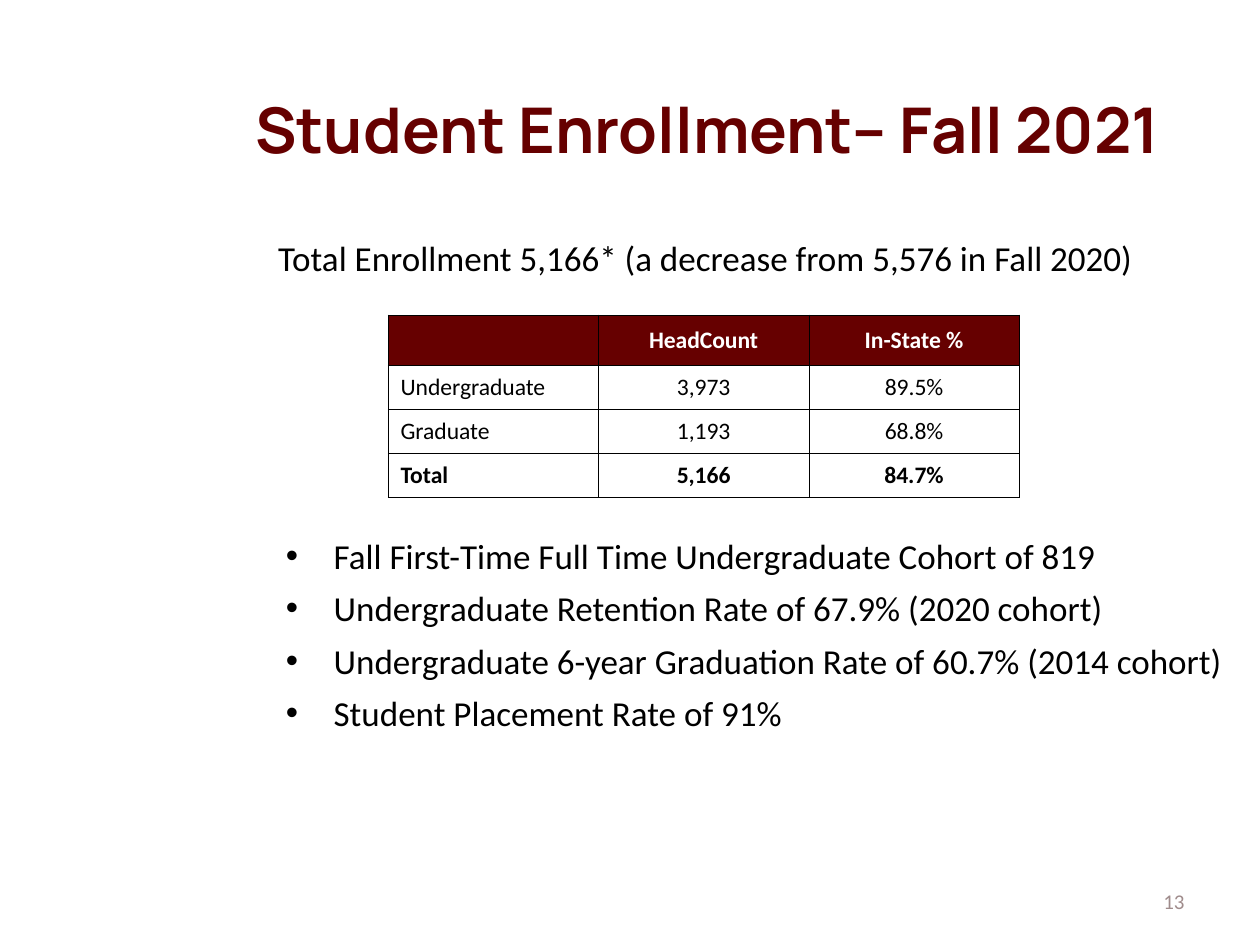
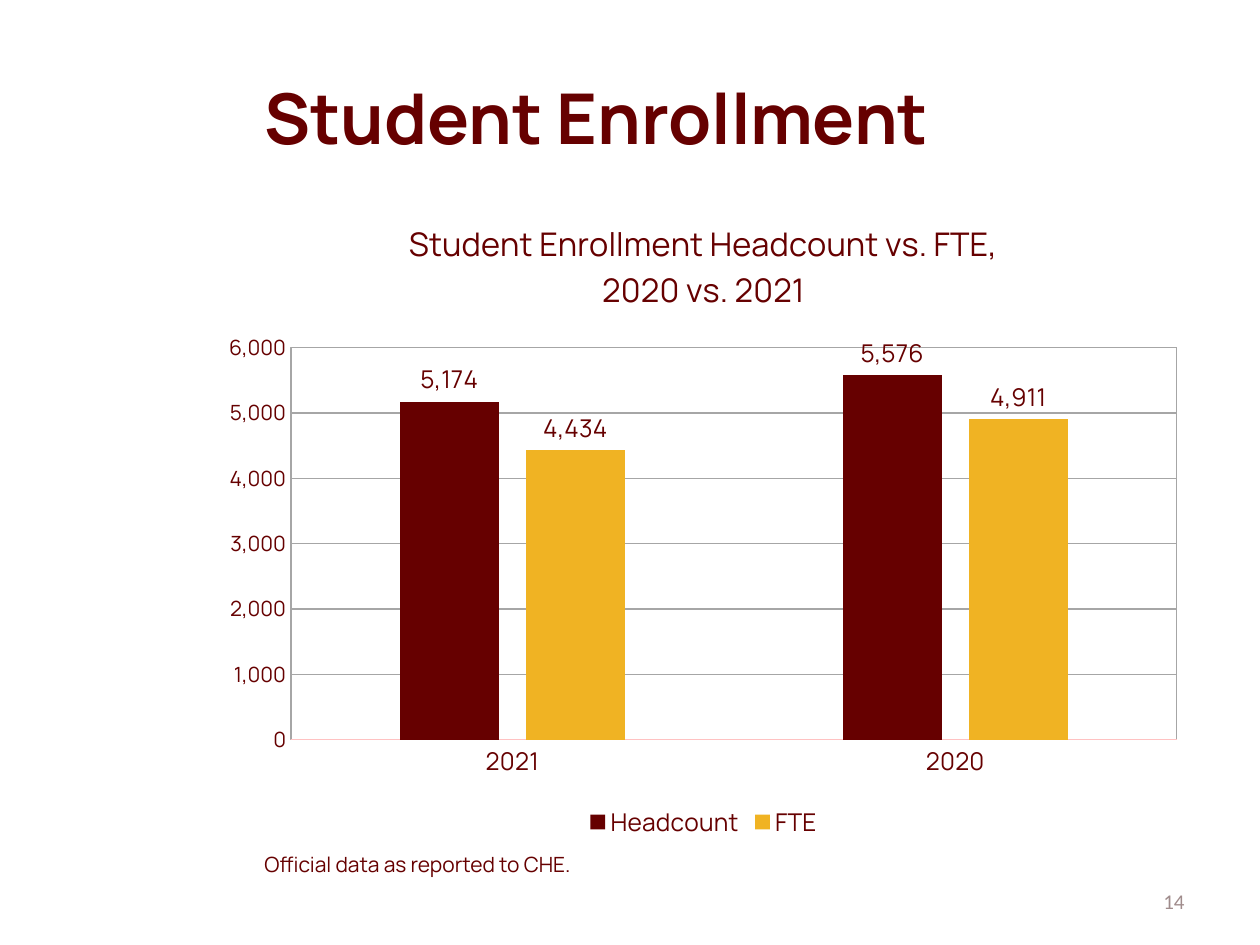
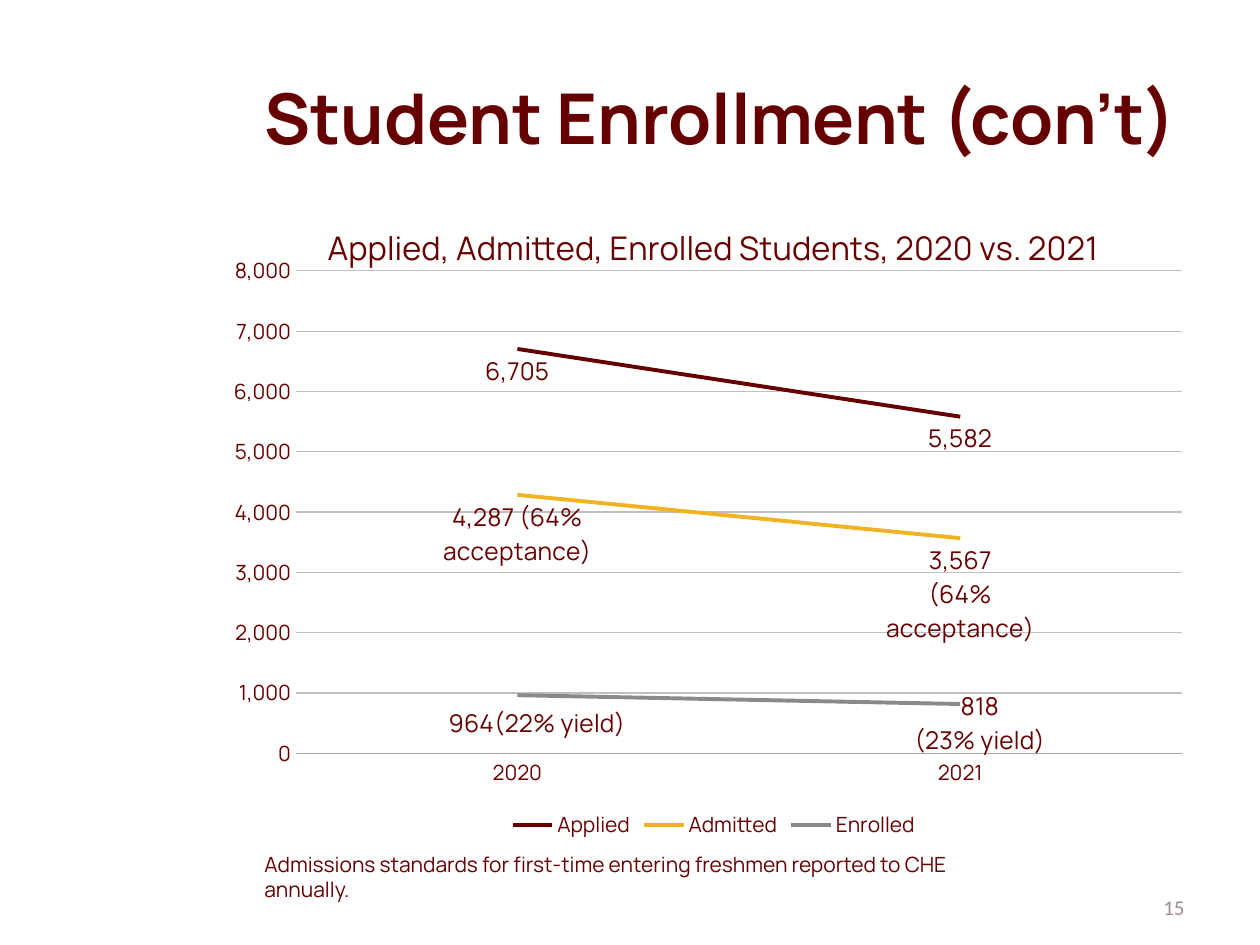
from dataclasses import dataclass

from lxml import etree
from pptx import Presentation
from pptx.chart.data import CategoryChartData
from pptx.dml.color import RGBColor
from pptx.enum.chart import XL_CHART_TYPE, XL_LABEL_POSITION, XL_LEGEND_POSITION, XL_TICK_MARK
from pptx.enum.text import MSO_ANCHOR, PP_ALIGN
from pptx.oxml import parse_xml
from pptx.oxml.ns import nsdecls, qn
from pptx.util import Emu, Pt

LEFT, CENTER, RIGHT = PP_ALIGN.LEFT, PP_ALIGN.CENTER, PP_ALIGN.RIGHT
TOP, MIDDLE = MSO_ANCHOR.TOP, MSO_ANCHOR.MIDDLE
COLUMNS, LINES = XL_CHART_TYPE.COLUMN_CLUSTERED, XL_CHART_TYPE.LINE
ABOVE_BAR, BELOW = XL_LABEL_POSITION.OUTSIDE_END, XL_LABEL_POSITION.BELOW
LEGEND_BOTTOM, NO_TICK = XL_LEGEND_POSITION.BOTTOM, XL_TICK_MARK.NONE
THOUSANDS = "#,##0"


class Theme:
    maroon, gold, gray = "660000", "F0B323", "888B8D"
    black, white, page_number = "000000", "FFFFFF", "A08C8C"
    pink_line, dark_grid, light_grid = "FFC2C2", "A6A6A6", "BFBFBF"
    heading, body = "Manrope", "Calibri"
    title, long_title, chart_title = 40, 36, 18.6
    text, label, cell, small = 20, 14, 13.5, 12


@dataclass
class ChartStyle:
    category_size: float
    legend_size: float
    category_line: str
    grid: str
    maximum: int
    plot_box: tuple


def px(value):
    """Turn px (100 to the inch) into EMU."""
    return Emu(value * 9144)


def rgb(color):
    return RGBColor.from_string(color)


def style_font(font, size, color, name=Theme.heading, bold=False):
    font.size, font.name, font.bold = Pt(size), name, bold
    font.color.rgb = rgb(color)


def add_span(para, text, size, color, name=Theme.heading, bold=False):
    span = para.add_run()
    span.text = text
    style_font(span.font, size, color, name, bold)


def add_frame(page, box, anchor=TOP):
    frame = page.shapes.add_textbox(*map(px, box)).text_frame
    frame.word_wrap = True
    frame.vertical_anchor = anchor
    return frame


def add_title(page, text, box=(200, 30, 800, 125), size=Theme.title, align=LEFT, inset=10):
    frame = add_frame(page, box, MIDDLE)
    frame.margin_left = px(inset)
    para = frame.paragraphs[0]
    para.alignment = align
    add_span(para, text, size, Theme.maroon, bold=True)


def add_page_number(page, number, top=695):
    para = add_frame(page, (717, top, 233, 40), MIDDLE).paragraphs[0]
    para.alignment = RIGHT
    add_span(para, str(number), Theme.small, Theme.page_number, Theme.body)


def add_source_note(page, text, width, height):
    para = add_frame(page, (200, 671, width, height)).paragraphs[0]
    add_span(para, text, Theme.small, Theme.maroon)


def indent(para, left, first=0):
    properties = para._p.get_or_add_pPr()
    properties.set("marL", str(px(left)))
    properties.set("indent", str(px(first)))
    return properties


def add_summary(page, box, intro, facts):
    """Place the intro line and, below the room for the table, the bullets."""
    frame = add_frame(page, box)
    para = frame.paragraphs[0]
    indent(para, 44)
    para.space_after = Pt(6)
    add_span(para, intro, Theme.text, Theme.black, Theme.body)
    for index, fact in enumerate(facts):
        para = frame.add_paragraph()
        properties = indent(para, 88, -38)
        etree.SubElement(properties, qn("a:buFont"), typeface="Arial")
        etree.SubElement(properties, qn("a:buChar"), char="•")
        para.space_before = Pt(0 if index else 140)
        para.space_after = Pt(6)
        add_span(para, fact, Theme.text, Theme.black, Theme.body)


def add_cell_borders(cell):
    properties = cell._tc.get_or_add_tcPr()
    for position, side in enumerate(("lnL", "lnR", "lnT", "lnB")):
        properties.insert(position, parse_xml(
            f'<a:{side} {nsdecls("a")} w="5461"><a:solidFill>'
            f'<a:srgbClr val="{Theme.black}"/></a:solidFill></a:{side}>'))


def add_headcount_table(page, box, rows):
    table = page.shapes.add_table(len(rows), len(rows[0]), *map(px, box)).table
    for column in table.columns:
        column.width = px(box[2] // len(rows[0]))
    last = len(rows) - 1
    for r, values in enumerate(rows):
        table.rows[r].height = px(35 if r else 39)
        for c, value in enumerate(values):
            cell = table.cell(r, c)
            cell.vertical_anchor = MIDDLE
            cell.fill.solid()
            cell.fill.fore_color.rgb = rgb(Theme.white if r else Theme.maroon)
            add_cell_borders(cell)
            para = cell.text_frame.paragraphs[0]
            para.alignment = CENTER if c else LEFT
            if value:
                add_span(para, value, Theme.cell, Theme.black if r else Theme.white,
                         Theme.body, r in (0, last))


def set_plot_area(chart, box, plot_box):
    """Fix the inner plot area, given relative to the chart's box."""
    area = chart._chartSpace.chart.plotArea
    for old in area.findall(qn("c:layout")):
        area.remove(old)
    width, height = box[2:]
    left, top, plot_width, plot_height = plot_box
    shares = {"x": left / width, "y": top / height,
              "w": plot_width / width, "h": plot_height / height}
    sizes = "".join(f'<c:{key} val="{share:.4f}"/>' for key, share in shares.items())
    area.insert(0, parse_xml(
        f'<c:layout {nsdecls("c")}><c:manualLayout><c:layoutTarget val="inner"/>'
        f'<c:xMode val="edge"/><c:yMode val="edge"/>{sizes}</c:manualLayout></c:layout>'))


def add_plot_border(chart, color):
    chart._chartSpace.chart.plotArea.append(parse_xml(
        f'<c:spPr {nsdecls("c", "a")}><a:noFill/><a:ln w="9525"><a:solidFill>'
        f'<a:srgbClr val="{color}"/></a:solidFill></a:ln></c:spPr>'))


def style_line(line, color, width=0.75):
    line.color.rgb = rgb(color)
    line.width = Pt(width)


def add_chart(page, box, kind, title_lines, categories, series, style):
    data = CategoryChartData(number_format=THOUSANDS)
    data.categories = categories
    for name, values in series:
        data.add_series(name, values)
    chart = page.shapes.add_chart(kind, *map(px, box), data).chart
    style_font(chart.font, 10, Theme.maroon, Theme.body)

    frame = chart.chart_title.text_frame
    for index, text in enumerate(title_lines):
        para = frame.add_paragraph() if index else frame.paragraphs[0]
        add_span(para, text, Theme.chart_title, Theme.maroon)

    chart.has_legend = True
    chart.legend.position = LEGEND_BOTTOM
    chart.legend.include_in_layout = False
    style_font(chart.legend.font, style.legend_size, Theme.maroon)

    sizes = (style.category_size, Theme.small)
    for axis, size in zip((chart.category_axis, chart.value_axis), sizes):
        axis.major_tick_mark = axis.minor_tick_mark = NO_TICK
        style_font(axis.tick_labels.font, size, Theme.maroon)
    style_line(chart.category_axis.format.line, style.category_line)
    scale = chart.value_axis
    scale.minimum_scale, scale.maximum_scale, scale.major_unit = 0, style.maximum, 1000
    scale.tick_labels.number_format = THOUSANDS
    scale.tick_labels.number_format_is_linked = False
    scale.format.line.fill.background()
    style_line(scale.major_gridlines.format.line, style.grid)
    chart.plots[0].vary_by_categories = False
    set_plot_area(chart, box, style.plot_box)
    return chart


def add_value_labels(series, position):
    labels = series.data_labels
    labels.show_value = True
    labels.number_format, labels.number_format_is_linked = THOUSANDS, False
    labels.position = position
    style_font(labels.font, Theme.label, Theme.maroon)


def add_point_label(series, index, lines, shift=None):
    """Write a label of its own at a point, moved by shares of the chart size."""
    label = series.points[index].data_label
    frame = label.text_frame
    for number, text in enumerate(lines):
        para = frame.add_paragraph() if number else frame.paragraphs[0]
        add_span(para, text, Theme.label, Theme.maroon)
    label.position = BELOW
    if shift:
        number = series._element.find(f"{qn('c:dLbls')}/{qn('c:dLbl')}[{index + 1}]/{qn('c:idx')}")
        number.addnext(parse_xml(
            f'<c:layout {nsdecls("c")}><c:manualLayout><c:x val="{shift[0]}"/>'
            f'<c:y val="{shift[1]}"/></c:manualLayout></c:layout>'))


def build_fall_enrollment(page):
    add_title(page, "Student Enrollment– Fall 2021", (0, 71, 1000, 61),
              Theme.long_title, CENTER, 133)
    add_page_number(page, 13)
    add_summary(page, (167, 183, 867, 416),
                "Total Enrollment 5,166* (a decrease from 5,576 in Fall 2020)",
                ["Fall First-Time Full Time Undergraduate Cohort of 819",
                 "Undergraduate Retention Rate of 67.9% (2020 cohort)",
                 "Undergraduate 6-year Graduation Rate of 60.7% (2014 cohort)",
                 "Student Placement Rate of 91%"])
    add_headcount_table(page, (308, 250, 501, 144), [
        ("", "HeadCount", "In-State %"),
        ("Undergraduate", "3,973", "89.5%"),
        ("Graduate", "1,193", "68.8%"),
        ("Total", "5,166", "84.7%")])


def build_headcount_chart(page):
    add_title(page, "Student Enrollment")
    style = ChartStyle(Theme.label, Theme.label, Theme.pink_line, Theme.dark_grid,
                       6000, (64, 121, 703, 311))
    chart = add_chart(page, (167, 155, 783, 515), COLUMNS,
                      ["Student Enrollment Headcount vs. FTE,", "2020 vs. 2021"],
                      ["2021", "2020"],
                      [("Headcount", (5174, 5576)), ("FTE", (4434, 4911))], style)
    add_plot_border(chart, Theme.dark_grid)
    plot = chart.plots[0]
    plot.gap_width, plot.overlap = 219, -27
    for series, color in zip(plot.series, (Theme.maroon, Theme.gold)):
        series.format.fill.solid()
        series.format.fill.fore_color.rgb = rgb(color)
        add_value_labels(series, ABOVE_BAR)
    add_page_number(page, 14)
    add_source_note(page, "Official data as reported to CHE.", 267, 30)


def build_admissions_chart(page):
    add_title(page, "Student Enrollment (con’t)")
    add_page_number(page, 15, 700)
    style = ChartStyle(Theme.small, Theme.small, Theme.dark_grid, Theme.light_grid,
                       8000, (60, 60, 703, 383))
    chart = add_chart(page, (175, 155, 783, 515), LINES,
                      ["Applied, Admitted, Enrolled Students, 2020 vs. 2021"],
                      ["2020", "2021"],
                      [("Applied", (6705, 5582)), ("Admitted", (4287, 3567)),
                       ("Enrolled", (964, 818))], style)
    lines = chart.plots[0].series
    for series, color in zip(lines, (Theme.maroon, Theme.gold, Theme.gray)):
        series.smooth = False
        style_line(series.format.line, color, 2.25)
        add_value_labels(series, BELOW)
    _, admitted, enrolled = lines
    add_point_label(admitted, 0, ["4,287 (64% acceptance)"])
    add_point_label(admitted, 1, ["3,567", "(64% acceptance)"])
    add_point_label(enrolled, 0, ["964(22% yield)"], (0.02, 0.01))
    add_point_label(enrolled, 1, ["818", "(23% yield)"], (0.02, -0.03))
    add_source_note(page, "Admissions standards for first-time entering freshmen "
                    "reported to CHE annually.", 617, 50)


def main():
    deck = Presentation()
    deck.slide_width, deck.slide_height = px(1000), px(750)
    blank = deck.slide_layouts[6]
    for build in (build_fall_enrollment, build_headcount_chart, build_admissions_chart):
        build(deck.slides.add_slide(blank))
    deck.save("out.pptx")


if __name__ == "__main__":
    main()
